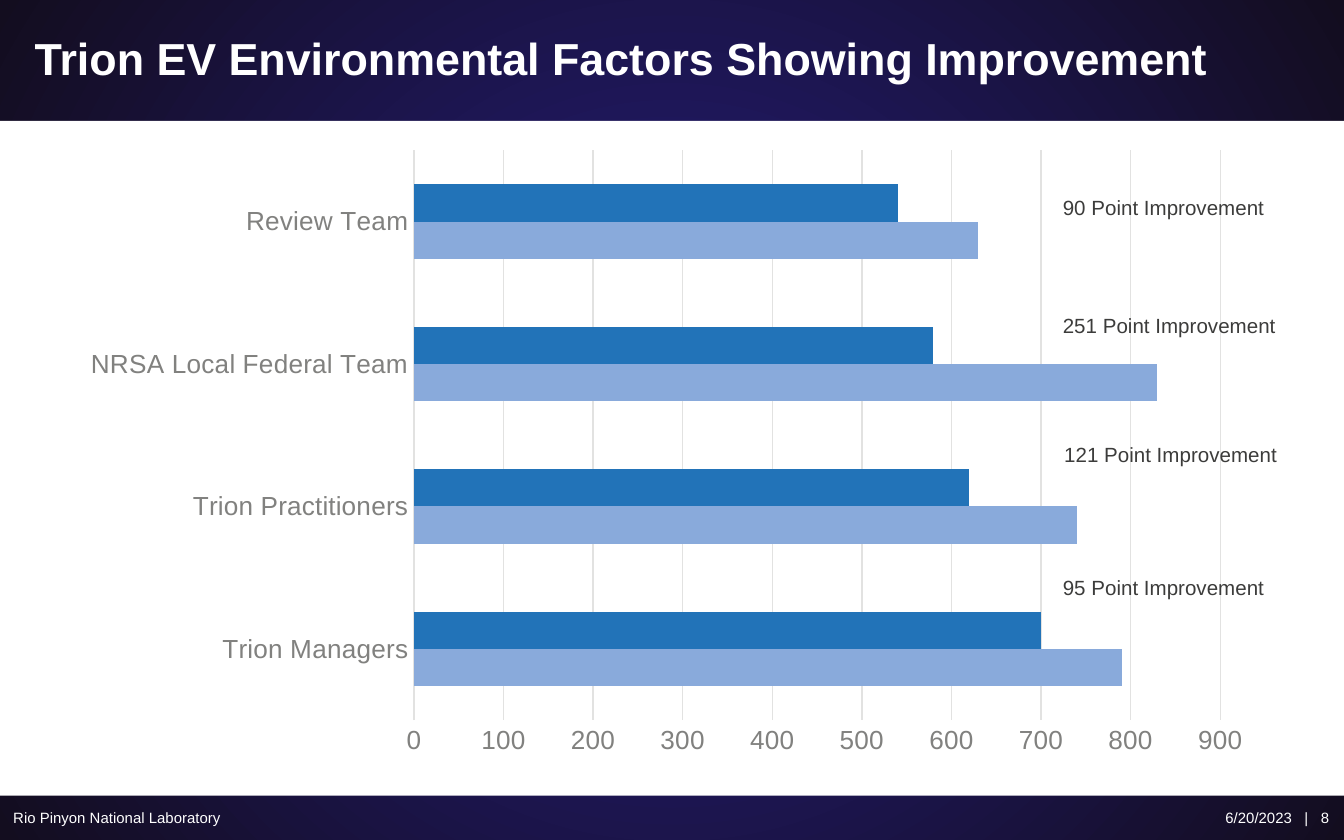
from typing import NamedTuple

from lxml import etree
from pptx import Presentation
from pptx.chart.data import CategoryChartData
from pptx.dml.color import RGBColor
from pptx.enum.chart import XL_CHART_TYPE as ChartType, XL_TICK_MARK as Tick
from pptx.enum.shapes import MSO_SHAPE as Shape
from pptx.enum.text import MSO_ANCHOR as Anchor, PP_ALIGN as Align
from pptx.oxml import parse_xml
from pptx.oxml.ns import nsdecls, qn
from pptx.util import Inches, Pt

FONT = "Arial"
WHITE, INK, GREY, GRID = "FFFFFF", "3C3C3B", "81817F", "E2E2E1"
CHART_WIDTH, CHART_HEIGHT = 8.93, 4.68


class Label(NamedTuple):
    text: str
    left: float
    top: float
    width: float
    height: float
    size: float
    color: str
    bold: bool = False
    align: Align = Align.LEFT
    anchor: Anchor = Anchor.MIDDLE


class Series(NamedTuple):
    name: str
    values: tuple[int, ...]
    color: str


CATEGORIES = ("Trion Managers", "Trion Practitioners",
              "NRSA Local Federal Team", "Review Team")
SERIES = (
    Series("Series 1", (790, 740, 830, 630), "89AADB"),
    Series("Series 2", (700, 620, 580, 540), "2273B8"),
)
FRAME_LABELS = (
    Label("Trion EV Environmental Factors Showing Improvement",
          0.16, -0.02, 9, 0.9, 24, WHITE, bold=True),
    Label("6/20/2023   |   8", 7.66, 5.92, 2.33, 0.33, 8, WHITE, align=Align.RIGHT),
    Label("Rio Pinyon National Laboratory", 0, 5.92, 3.62, 0.33, 8, WHITE),
)
# Points gained, left and top of each note
NOTES = ((90, 7.81, 1.4), (251, 7.81, 2.28), (121, 7.82, 3.24), (95, 7.81, 4.23))


def rgb(color: str) -> RGBColor:
    return RGBColor.from_string(color)


def style_font(font, size: float, color: str, bold: bool = False) -> None:
    font.name, font.size, font.bold = FONT, Pt(size), bold
    font.color.rgb = rgb(color)


def set_background(s) -> None:
    """Fill the slide with a gradient radiating from its centre."""
    fill = s.background.fill
    fill.gradient()
    for stop, color in zip(fill.gradient_stops, ("251D7D", "130D1F")):
        stop.color.rgb = rgb(color)
    grad = s.background._cSld.find(".//" + qn("a:gradFill"))
    linear = grad.find(qn("a:lin"))
    radial = etree.Element(qn("a:path"), path="circle")
    etree.SubElement(radial, qn("a:fillToRect"),
                     {side: "50000" for side in "ltrb"})
    grad.replace(linear, radial)


def add_label(s, label: Label) -> None:
    box = s.shapes.add_textbox(Inches(label.left), Inches(label.top),
                               Inches(label.width), Inches(label.height))
    tf = box.text_frame
    tf.word_wrap = True
    tf.vertical_anchor = label.anchor
    p = tf.paragraphs[0]
    p.alignment = label.align
    r = p.add_run()
    r.text = label.text
    style_font(r.font, label.size, label.color, label.bold)


def add_bar_chart(s) -> None:
    data = CategoryChartData()
    data.categories = CATEGORIES
    for series in SERIES:
        data.add_series(series.name, series.values)
    chart = s.shapes.add_chart(ChartType.BAR_CLUSTERED, Inches(0.5), Inches(1.03),
                               Inches(CHART_WIDTH), Inches(CHART_HEIGHT), data).chart
    chart.has_legend = chart.has_title = False
    style_font(chart.font, 14, INK)

    plot = chart.plots[0]
    plot.gap_width, plot.overlap, plot.vary_by_categories = 182, 0, False
    for bars, series in zip(plot.series, SERIES):
        bars.format.fill.solid()
        bars.format.fill.fore_color.rgb = rgb(series.color)

    category, value = chart.category_axis, chart.value_axis
    for axis in (category, value):
        axis.major_tick_mark = axis.minor_tick_mark = Tick.NONE
        style_font(axis.tick_labels.font, 14, GREY)
    category.has_major_gridlines = False
    value.has_major_gridlines = True
    value.minimum_scale, value.maximum_scale, value.major_unit = 0, 900, 100
    value.format.line.fill.background()
    for line in (category.format.line, value.major_gridlines.format.line):
        line.color.rgb = rgb(GRID)
        line.width = Pt(0.75)
    set_plot_area(chart, left=2.58, top=0.09, width=6, height=4.24)


def set_plot_area(chart, left: float, top: float, width: float, height: float) -> None:
    """Place the inner plot area, in inches from the chart's corner."""
    fractions = {"x": left / CHART_WIDTH, "y": top / CHART_HEIGHT,
                 "w": width / CHART_WIDTH, "h": height / CHART_HEIGHT}
    places = "".join(f'<c:{k} val="{v:.4f}"/>' for k, v in fractions.items())
    layout = parse_xml(
        f'<c:layout {nsdecls("c")}><c:manualLayout><c:layoutTarget val="inner"/>'
        f'<c:xMode val="edge"/><c:yMode val="edge"/>{places}'
        '</c:manualLayout></c:layout>')
    area = chart._chartSpace.chart.plotArea
    for old in area.findall(qn("c:layout")):
        area.remove(old)
    area.insert(0, layout)


def main() -> None:
    prs = Presentation()
    prs.slide_width, prs.slide_height = Inches(10), Inches(6.25)
    s = prs.slides.add_slide(prs.slide_layouts[6])
    set_background(s)

    panel = s.shapes.add_shape(Shape.RECTANGLE, 0, Inches(0.9), Inches(10), Inches(5.02))
    panel.shadow.inherit = False
    panel.fill.solid()
    panel.fill.fore_color.rgb = rgb(WHITE)
    panel.line.fill.background()

    for label in FRAME_LABELS:
        add_label(s, label)
    add_bar_chart(s)
    for points, left, top in NOTES:
        add_label(s, Label(f"{points} Point Improvement", left, top, 2.03, 0.29,
                           11, INK, anchor=Anchor.TOP))
    prs.save("out.pptx")


if __name__ == "__main__":
    main()
